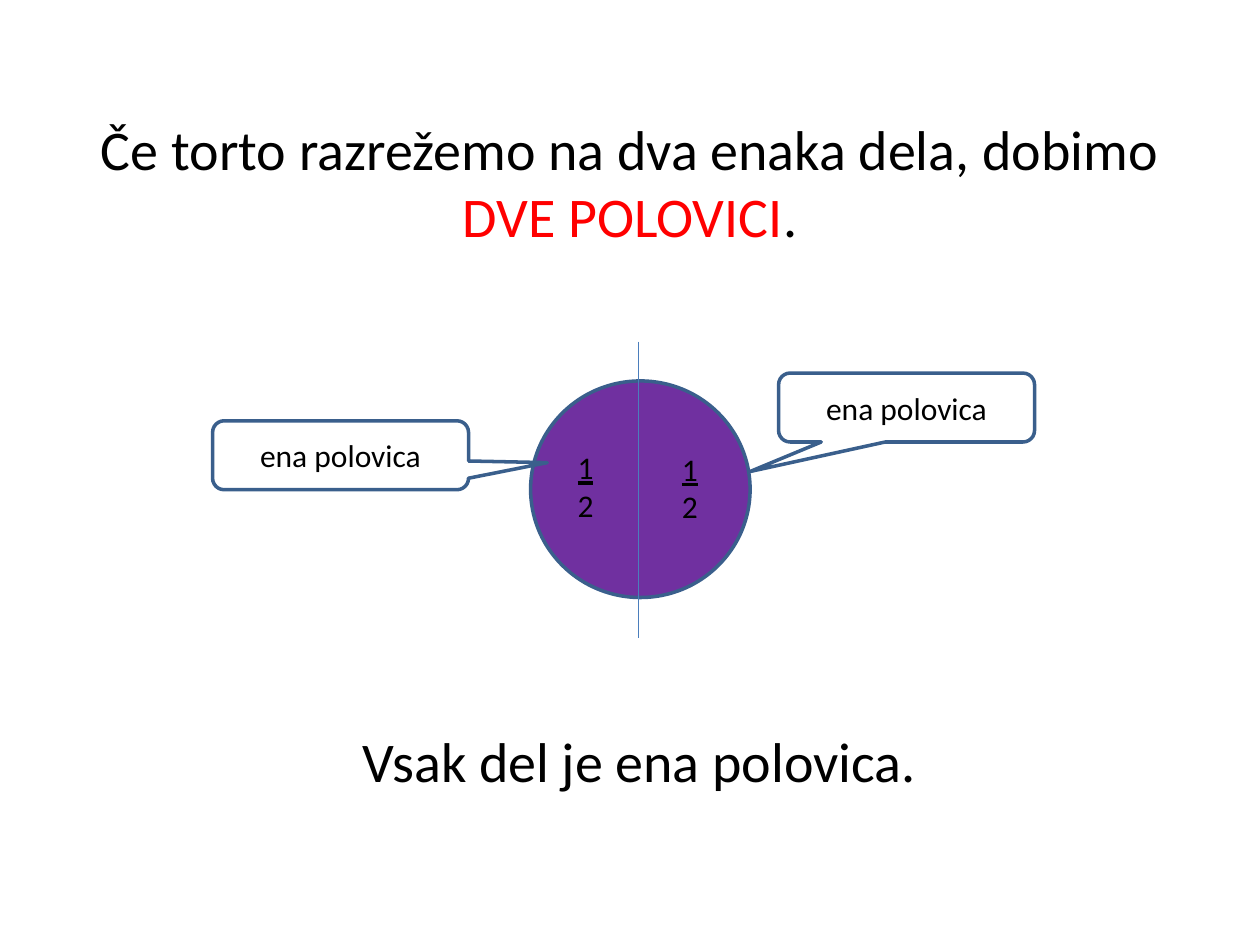
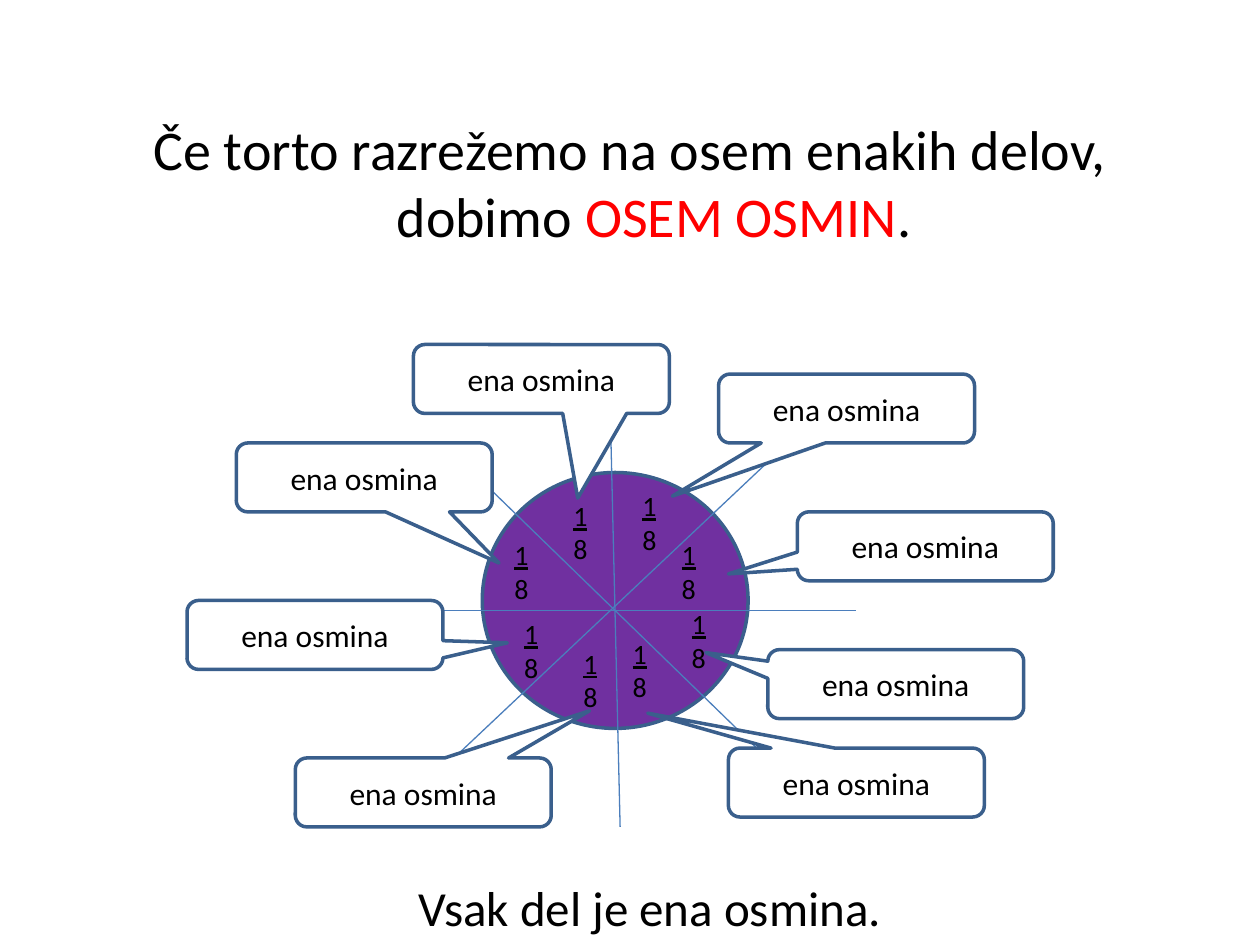
from dataclasses import dataclass

from lxml.etree import SubElement
from pptx import Presentation
from pptx.dml.color import RGBColor
from pptx.enum.shapes import MSO_CONNECTOR, MSO_SHAPE
from pptx.enum.text import MSO_ANCHOR, PP_ALIGN
from pptx.oxml.ns import qn
from pptx.util import Inches, Pt

BLANK_LAYOUT = 6


@dataclass(frozen=True)
class Theme:
    font: str = "Calibri"
    text: RGBColor = RGBColor(0, 0, 0)
    highlight: RGBColor = RGBColor(0xFF, 0, 0)
    cake: RGBColor = RGBColor(0x70, 0x30, 0xA0)
    callout: RGBColor = RGBColor(0xFF, 0xFF, 0xFF)
    outline: RGBColor = RGBColor(0x3A, 0x5F, 0x8C)
    cut: RGBColor = RGBColor(0x4B, 0x7E, 0xBC)
    outline_width: float = 2
    cut_width: float = 0.75
    title_size: int = 32
    callout_size: int = 18


class FractionDeck:
    """Draws on a grid of 128 columns by 96 rows; boxes are left, top, width, height."""

    columns, rows = 128, 96
    callout_columns, callout_rows = 26, 7

    def __init__(self, theme):
        self.theme = theme
        self.presentation = Presentation()
        self.presentation.slide_width = Inches(10)
        self.presentation.slide_height = Inches(7.5)
        self.slide = None

    def add_slide(self):
        layout = self.presentation.slide_layouts[BLANK_LAYOUT]
        self.slide = self.presentation.slides.add_slide(layout)

    def x(self, column):
        return round(self.presentation.slide_width * column / self.columns)

    def y(self, row):
        return round(self.presentation.slide_height * row / self.rows)

    def place(self, left, top, width, height):
        return self.x(left), self.y(top), self.x(width), self.y(height)

    def format_run(self, run, size, color=None):
        run.font.name = self.theme.font
        run.font.size = Pt(size)
        run.font.color.rgb = color or self.theme.text

    def text_box(self, box, text, size, alignment=PP_ALIGN.CENTER, wrap=True):
        frame = self.slide.shapes.add_textbox(*self.place(*box)).text_frame
        frame.word_wrap = wrap
        frame.text = text
        for paragraph in frame.paragraphs:
            paragraph.alignment = alignment
            for run in paragraph.runs:
                self.format_run(run, size)
        return frame

    def title(self, opening, highlighted, hanging_indent=0):
        frame = self.text_box((6.4, 2.9, 115.2, 82.8), opening, self.theme.title_size)
        frame.margin_top = Inches(0.68)
        paragraph = frame.paragraphs[0]
        for text, color in ((highlighted, self.theme.highlight), (".", self.theme.text)):
            run = paragraph.add_run()
            run.text = text
            self.format_run(run, self.theme.title_size, color)
        if hanging_indent:
            properties = paragraph._p.get_or_add_pPr()
            properties.set("marL", str(Inches(hanging_indent)))
            properties.set("indent", str(-Inches(hanging_indent)))

    def caption(self, box, text, size):
        self.text_box(box, text, size, wrap=False)

    def fraction(self, box, denominator, size, alignment):
        frame = self.text_box(box, f"1\n{denominator}", size, alignment)
        frame.paragraphs[0].runs[0].font.underline = True

    def outlined_shape(self, kind, box, fill):
        shape = self.slide.shapes.add_shape(kind, *self.place(*box))
        shape.shadow.inherit = False
        shape.fill.solid()
        shape.fill.fore_color.rgb = fill
        shape.line.color.rgb = self.theme.outline
        shape.line.width = Pt(self.theme.outline_width)
        return shape

    def cake(self, box):
        self.outlined_shape(MSO_SHAPE.OVAL, box, self.theme.cake)

    def cut(self, start_column, start_row, end_column, end_row):
        line = self.slide.shapes.add_connector(
            MSO_CONNECTOR.STRAIGHT,
            self.x(start_column), self.y(start_row), self.x(end_column), self.y(end_row))
        line.line.color.rgb = self.theme.cut
        line.line.width = Pt(self.theme.cut_width)
        SubElement(line._element.spPr, qn("a:effectLst"))

    def callout(self, text, left, top, tip_column, tip_row):
        """Place a speech bubble whose tail ends at the given tip."""
        width, height = self.callout_columns, self.callout_rows
        shape = self.outlined_shape(MSO_SHAPE.ROUNDED_RECTANGULAR_CALLOUT,
                                    (left, top, width, height), self.theme.callout)
        shape.adjustments[0] = (tip_column - left) / width - 0.5
        shape.adjustments[1] = (tip_row - top) / height - 0.5
        frame = shape.text_frame
        frame.text = text
        frame.vertical_anchor = MSO_ANCHOR.MIDDLE
        paragraph = frame.paragraphs[0]
        paragraph.alignment = PP_ALIGN.CENTER
        self.format_run(paragraph.runs[0], self.theme.callout_size)


def add_halves(deck):
    deck.add_slide()
    deck.title("Če torto razrežemo na dva enaka dela, dobimo ", "DVE POLOVICI")
    deck.cake((53.9, 38.7, 22.3, 22))
    deck.cut(64.9, 34.7, 64.9, 64.8)
    for left, top in ((57, 44.9), (67.6, 45.05)):
        deck.fraction((left, top, 5, 9.1), 2, 18, PP_ALIGN.CENTER)
    for position in ((79.1, 37.9, 76.2, 47.9), (21.6, 42.75, 55.6, 47)):
        deck.callout("ena polovica", *position)
    deck.caption((9.6, 73.2, 110.8, 8.2), "Vsak del je ena polovica.", 32)


def add_eighths(deck):
    deck.add_slide()
    deck.title("Če torto razrežemo na osem enakih delov, dobimo ", "OSEM OSMIN",
               hanging_indent=0.38)
    deck.cake((49, 48, 27, 26))
    for ends in ((62, 42, 63, 84), (38, 62, 87, 62), (46, 46, 81, 80), (79, 46, 44, 79)):
        deck.cut(*ends)
    fraction_corners = ((64, 49), (68, 54), (69, 61), (63, 64),
                        (52, 62), (51, 54), (57, 50), (58, 65))
    for left, top in fraction_corners:
        deck.fraction((left, top, 5.1, 8.2), 8, 16, PP_ALIGN.LEFT)
    callouts = (
        (73, 38, 68.3, 50.4),
        (81, 52, 74, 58.3),
        (78, 66, 71.7, 66.3),
        (42, 35, 58.7, 50.6),
        (24, 45, 50.7, 57.2),
        (74, 76, 65.8, 72.45),
        (19, 61, 51.55, 65.3),
        (30, 77, 59.9, 72.2),
    )
    for position in callouts:
        deck.callout("ena osmina", *position)
    deck.caption((41, 88.5, 50, 7.3), "Vsak del je ena osmina.", 28)


def main():
    deck = FractionDeck(Theme())
    add_halves(deck)
    add_eighths(deck)
    deck.presentation.save("out.pptx")


if __name__ == "__main__":
    main()
